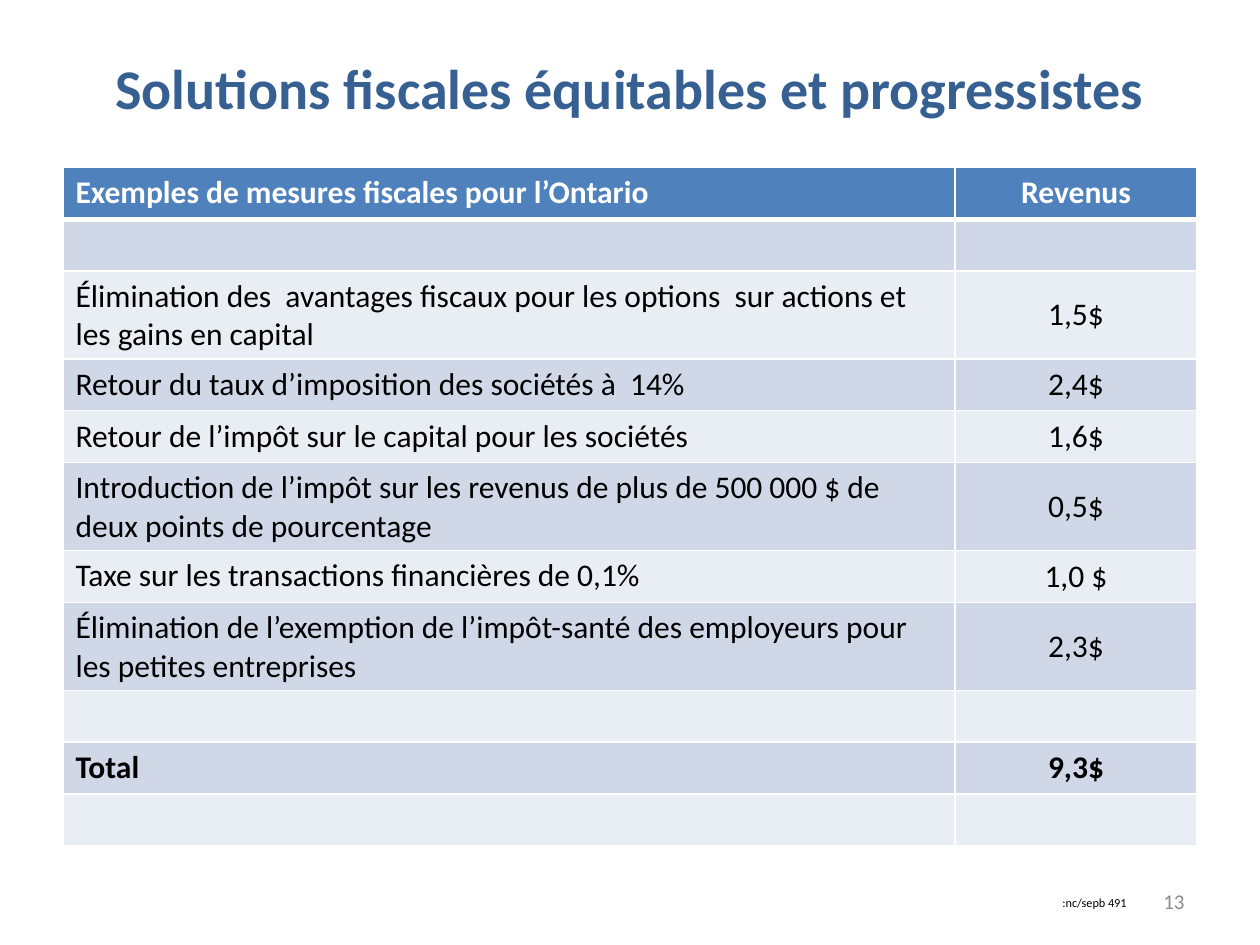
from dataclasses import dataclass

from lxml import etree
from pptx import Presentation
from pptx import util as u
from pptx.dml.color import RGBColor
from pptx.enum import text
from pptx.oxml import ns

COLUMNS, ROWS = 100, 75
LEFT, CENTER, RIGHT = text.PP_ALIGN.LEFT, text.PP_ALIGN.CENTER, text.PP_ALIGN.RIGHT
TOP, MIDDLE = text.MSO_ANCHOR.TOP, text.MSO_ANCHOR.MIDDLE


@dataclass(frozen=True)
class Theme:
    font: str = "Calibri"
    title: str = "376092"
    header: str = "4F81BD"
    bands: tuple = ("D0D8E8", "E9EDF4")
    white: str = "FFFFFF"
    black: str = "000000"
    muted: str = "8C8C8C"
    title_size: int = 32
    body_size: int = 18
    number_size: int = 12
    note_size: int = 7


class SlideBuilder:
    def __init__(self, presentation, theme):
        self.theme = theme
        self.slide = presentation.slides.add_slide(presentation.slide_layouts[6])
        self.column = presentation.slide_width / COLUMNS
        self.row = presentation.slide_height / ROWS

    def box(self, left, top, width, height):
        """Turn grid columns and rows into slide lengths."""
        return (u.Emu(round(left * self.column)), u.Emu(round(top * self.row)),
                u.Emu(round(width * self.column)), u.Emu(round(height * self.row)))

    def add_wording(self, frame, wording, size, color, align=LEFT, bold=False):
        paragraph = frame.paragraphs[0]
        paragraph.alignment = align
        run = paragraph.add_run()
        run.text = wording
        formats = {"name": self.theme.font, "size": u.Pt(size), "bold": bold}
        for name, value in formats.items():
            setattr(run.font, name, value)
        run.font.color.rgb = RGBColor.from_string(color)

    def text_box(self, place, wording, size, color, align, anchor=MIDDLE, bold=False):
        frame = self.slide.shapes.add_textbox(*self.box(*place)).text_frame
        frame.word_wrap = True
        frame.vertical_anchor = anchor
        self.add_wording(frame, wording, size, color, align, bold)

    def border(self, cell, side, points):
        line = etree.SubElement(cell._tc.get_or_add_tcPr(), ns.qn(f"a:ln{side}"),
                                w=str(u.Pt(points)))
        fill = etree.SubElement(line, ns.qn("a:solidFill"))
        etree.SubElement(fill, ns.qn("a:srgbClr"), val=self.theme.white)

    def cell(self, cell, wording, fill, color, align, anchor, bold, edges):
        for side, points in edges.items():
            self.border(cell, side, points)
        cell.fill.solid()
        cell.fill.fore_color.rgb = RGBColor.from_string(fill)
        cell.vertical_anchor = anchor
        if wording:
            self.add_wording(cell.text_frame, wording, self.theme.body_size, color, align, bold)

    def table(self, left, top, widths, row_height, records):
        place = self.box(left, top, sum(widths), row_height * len(records))
        table = self.slide.shapes.add_table(len(records), len(widths), *place).table
        table.first_row = table.horz_banding = False
        for column, width in zip(table.columns, widths):
            column.width = u.Emu(round(width * self.column))
        for index, record in enumerate(records):
            header = index == 0
            fill = self.theme.header if header else self.theme.bands[(index - 1) % 2]
            color = self.theme.white if header else self.theme.black
            bold = header or record[0] == "Total"
            edges = {"L": 1, "R": 1, "T": 3 if index == 1 else 1, "B": 3 if header else 1}
            for position, wording in enumerate(record):
                align = CENTER if position else LEFT
                anchor = MIDDLE if position and not header else TOP
                self.cell(table.cell(index, position), wording, fill, color,
                          align, anchor, bold, edges)


MEASURES = [
    ("Exemples de mesures fiscales pour l’Ontario", "Revenus"),
    ("", ""),
    ("Élimination des  avantages fiscaux pour les options  sur actions et les gains en capital",
     "1,5$"),
    ("Retour du taux d’imposition des sociétés à  14%", "2,4$"),
    ("Retour de l’impôt sur le capital pour les sociétés", "1,6$"),
    ("Introduction de l’impôt sur les revenus de plus de 500 000 $ de deux points de pourcentage",
     "0,5$"),
    ("Taxe sur les transactions financières de 0,1%", "1,0 $"),
    ("Élimination de l’exemption de l’impôt-santé des employeurs pour les petites entreprises",
     "2,3$"),
    ("", ""),
    ("Total", "9,3$"),
    ("", ""),
]


def main():
    presentation = Presentation()
    presentation.slide_width, presentation.slide_height = u.Inches(10), u.Inches(7.5)
    theme = Theme()
    builder = SlideBuilder(presentation, theme)
    builder.text_box((5, 3, 90, 7.8), "Solutions fiscales équitables et progressistes",
                     theme.title_size, theme.title, CENTER, bold=True)
    builder.table(5, 13.3, (70.8, 19.2), 4.1, MEASURES)
    builder.text_box((71.7, 69.5, 23.3, 4), "13", theme.number_size, theme.muted, RIGHT)
    builder.text_box((80.3, 70.6, 10.1, 2.2), ":nc/sepb 491",
                     theme.note_size, theme.black, RIGHT, TOP)
    presentation.save("out.pptx")


if __name__ == "__main__":
    main()
